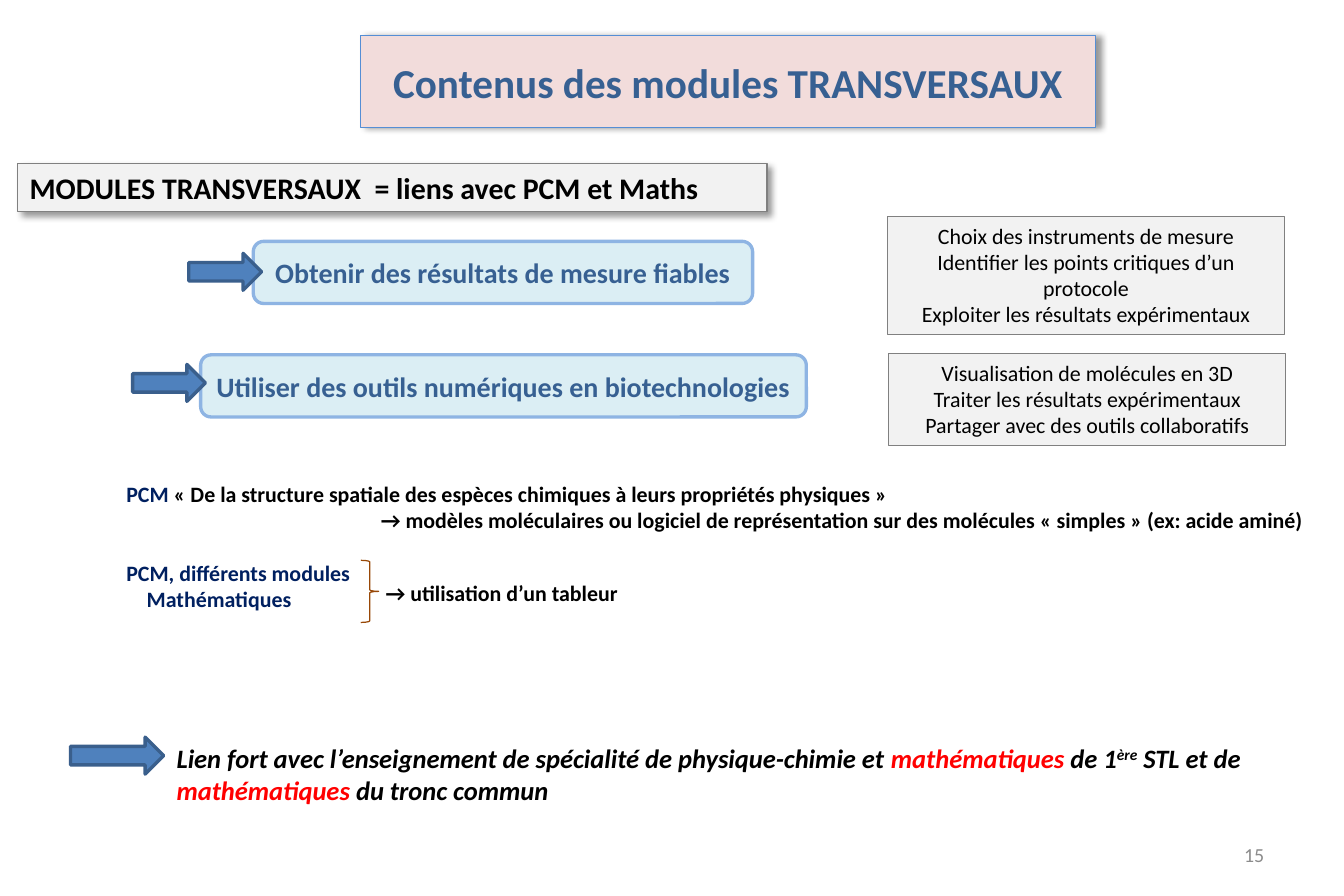
from lxml.etree import SubElement
from pptx import Presentation
from pptx.dml.color import RGBColor
from pptx.enum.shapes import MSO_SHAPE as Shp
from pptx.enum.text import MSO_ANCHOR as Anc, PP_ALIGN as Al
from pptx.oxml.ns import qn
from pptx.util import Inches, Pt

rgb = RGBColor.from_string
BLACK, NAVY, BLUE, RED = "000000", "002060", "376092", "FF0000"
GREY, EDGE = "F2F2F2", "808080"

deck = Presentation()
deck.slide_width, deck.slide_height = Inches(11.25), Inches(7.5)
slide = deck.slides.add_slide(deck.slide_layouts[6])


def draw(kind, at, fill, line, width=0.75, angle=None):
    """Add a preset shape; an angle in degrees gives it a soft shadow."""
    shape = slide.shapes.add_shape(kind, *map(Inches, at))
    shape.shadow.inherit = False
    if fill:
        shape.fill.solid()
        shape.fill.fore_color.rgb = rgb(fill)
    else:
        shape.fill.background()
    shape.line.color.rgb = rgb(line)
    shape.line.width = Pt(width)
    if angle is not None:
        effects = shape._element.spPr.find(qn("a:effectLst"))
        glow = SubElement(effects, qn("a:outerShdw"), blurRad=str(Pt(4)),
                          dist=str(Pt(3)), dir=str(angle * 60000),
                          algn="tl", rotWithShape="0")
        tint = SubElement(glow, qn("a:srgbClr"), val=BLACK)
        SubElement(tint, qn("a:alpha"), val="40000")
    return shape


def write(shape, paras, size, align=Al.LEFT, anchor=Anc.TOP, wrap=True, **look):
    """Fill a shape with paragraphs, each a list of (text, colour) runs."""
    frame = shape.text_frame
    frame.word_wrap = wrap
    frame.vertical_anchor = anchor
    form = {"name": "Calibri", "size": Pt(size), **look}
    for i, runs in enumerate(paras):
        para = frame.add_paragraph() if i else frame.paragraphs[0]
        para.alignment = align
        for text, colour in runs:
            run = para.add_run()
            run.text = text
            run.font.color.rgb = rgb(colour)
            for key, val in form.items():
                setattr(run.font, key, val)
    return frame.paragraphs


# Headings
title = draw(Shp.RECTANGLE, (3.02, 0.3, 6.15, 0.77), "F2DCDB", "558ED5", angle=0)
write(title, [[("Contenus des modules TRANSVERSAUX", BLUE)]], 24.8,
      Al.CENTER, Anc.MIDDLE, bold=True)
head = draw(Shp.RECTANGLE, (0.15, 1.37, 6.27, 0.4), GREY, EDGE, angle=45)
write(head, [[("MODULES TRANSVERSAUX  = liens avec PCM et Maths", BLACK)]], 18,
      bold=True)

# Modules and their contents
modules = [
    ((2.12, 2.02, 4.18, 0.52), "Obtenir des résultats de mesure fiables",
     (7.43, 1.81, 3.32, 0.99),
     ["Choix des instruments de mesure",
      "Identifier les points critiques d’un protocole",
      "Exploiter les résultats expérimentaux"]),
    ((1.68, 2.97, 5.07, 0.52), "Utiliser des outils numériques en biotechnologies",
     (7.44, 2.96, 3.32, 0.77),
     ["Visualisation de molécules en 3D",
      "Traiter les résultats expérimentaux",
      "Partager avec des outils collaboratifs"]),
]
for at, name, spot, items in modules:
    box = draw(Shp.ROUNDED_RECTANGLE, at, "DBEEF4", "8EB4E3", 2)
    write(box, [[(name, BLUE)]], 16.9, Al.CENTER, Anc.MIDDLE, bold=True)
    card = draw(Shp.RECTANGLE, spot, GREY, EDGE)
    write(card, [[(item, BLACK)] for item in items], 13.2, Al.CENTER)

for left, top, width in [(1.58, 2.12, 0.61), (1.11, 3.05, 0.61), (0.59, 6.17, 0.78)]:
    draw(Shp.RIGHT_ARROW, (left, top, width, 0.31), "4F81BD", "3A5F8C", 2)

# Links with other subjects
links = slide.shapes.add_textbox(*map(Inches, (0.96, 3.97, 10.17, 1.43)))
lines = write(links, [
    [("PCM ", NAVY),
     ("« De la structure spatiale des espèces chimiques à leurs propriétés physiques »",
      BLACK)],
    [("→ modèles moléculaires ou logiciel de représentation sur des molécules "
      "« simples » (ex: acide aminé)", BLACK)],
    [("PCM, différents modules", NAVY)],
    [("Mathématiques", NAVY)],
], 13.2, bold=True)
for i, indent in [(1, 2.13), (3, 0.17)]:
    lines[i]._p.get_or_add_pPr().set("marL", str(Inches(indent)))
lines[2].space_before = Pt(16)

draw(Shp.RIGHT_BRACE, (3.02, 4.69, 0.15, 0.52), None, "984807")
sheet = slide.shapes.add_textbox(*map(Inches, (3.13, 4.8, 2.17, 0.32)))
write(sheet, [[("→ utilisation d’un tableur", BLACK)]], 13.2, wrap=False, bold=True)

# Conclusion
final = slide.shapes.add_textbox(*map(Inches, (1.38, 6.16, 9.87, 0.64)))
lines = write(final, [[
    ("Lien fort avec l’enseignement de spécialité de physique-chimie et ", BLACK),
    ("mathématiques", RED), (" de 1", BLACK), ("ère", BLACK),
    (" STL et de ", BLACK), ("mathématiques", RED), (" du tronc commun", BLACK),
]], 16, bold=True, italic=True)
lines[0].runs[3]._r.get_or_add_rPr().set("baseline", "30000")

page = slide.shapes.add_textbox(*map(Inches, (8.06, 6.95, 2.62, 0.4)))
write(page, [[("15", "8C8C8C")]], 12, Al.RIGHT, Anc.MIDDLE)

deck.save("out.pptx")
